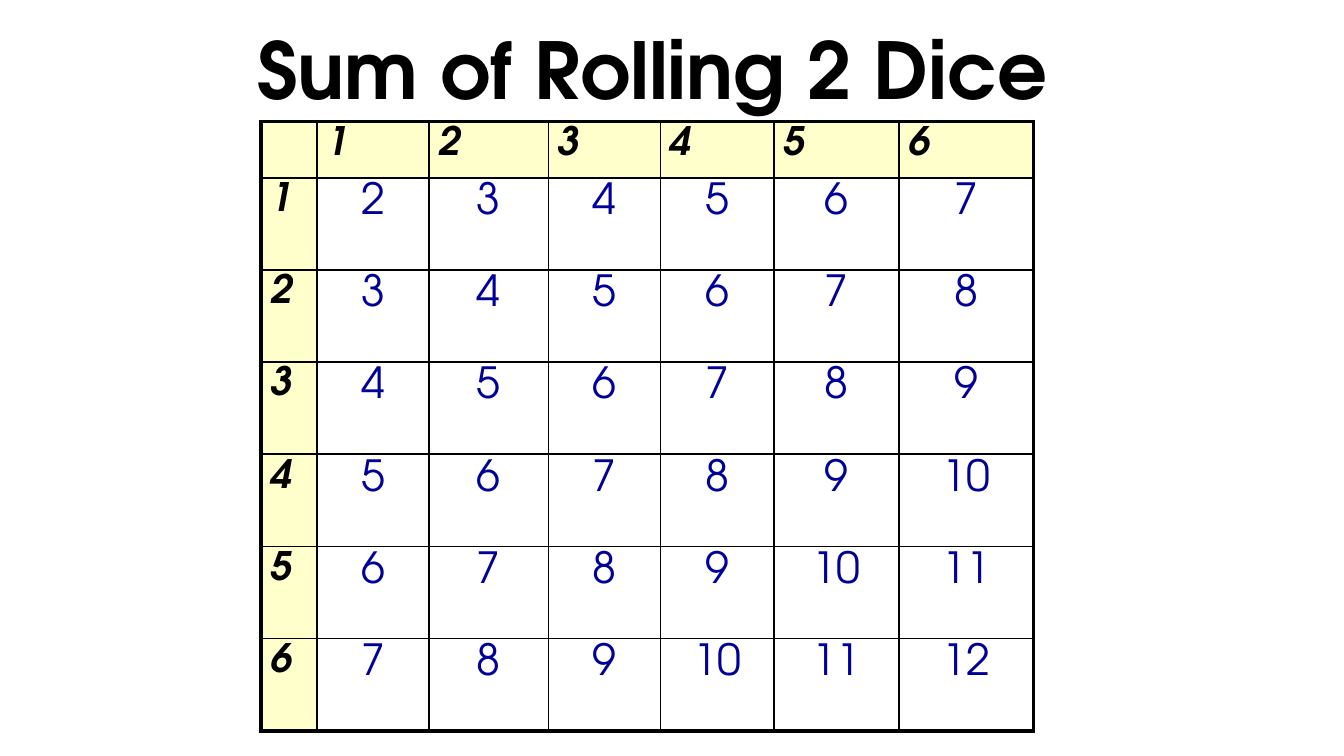
from lxml import etree
from pptx import Presentation
from pptx.dml.color import RGBColor
from pptx.enum.text import MSO_ANCHOR, PP_ALIGN
from pptx.oxml.ns import qn
from pptx.util import Pt

LEFT, CENTER = PP_ALIGN.LEFT, PP_ALIGN.CENTER
TOP, BOTTOM = MSO_ANCHOR.TOP, MSO_ANCHOR.BOTTOM

# Content
TITLE = "Sum of Rolling 2 Dice"
FACES = [1, 2, 3, 4, 5, 6]
GRID = [[""] + FACES] + [[face] + [face + other for other in FACES] for face in FACES]

# Layout, in points
COLUMN_WIDTHS = [30, 60, 64, 60, 61, 67, 72]
ROW_HEIGHTS = [30.24] + [49.4] * len(FACES)
TABLE_LEFT, TABLE_TOP = 139.8, 65
THIN, THICK = 1, 2.25

FONT = "TeX Gyre Adventor"
COLORS = {"ink": "000000", "sum": "000099", "header": "FFFFCC"}


def add_span(para, text, size, color, bold=False, italic=False):
    span = para.add_run()
    span.text = text
    font = span.font
    font.name, font.size, font.bold, font.italic = FONT, Pt(size), bold, italic
    font.color.rgb = RGBColor.from_string(COLORS[color])


def set_borders(cell, widths):
    properties = cell._tc.get_or_add_tcPr()
    for position, (side, width) in enumerate(widths.items()):
        line = etree.Element(qn(f"a:ln{side}"), w=str(Pt(width)))
        fill = etree.SubElement(line, qn("a:solidFill"))
        etree.SubElement(fill, qn("a:srgbClr"), val=COLORS["ink"])
        properties.insert(position, line)


def fill_cell(cell, value, row, column):
    is_header = row == 0 or column == 0
    cell.margin_left = cell.margin_right = Pt(5)
    cell.margin_top = cell.margin_bottom = Pt(2.7)
    cell.vertical_anchor = TOP
    if is_header:
        cell.fill.solid()
        cell.fill.fore_color.rgb = RGBColor.from_string(COLORS["header"])
    else:
        cell.fill.background()
    para = cell.text_frame.paragraphs[0]
    para.alignment = LEFT if is_header else CENTER
    if value and is_header:
        add_span(para, str(value), 21, "ink", bold=True, italic=True)
    elif value:
        add_span(para, str(value), 23, "sum")
    last = len(FACES)
    set_borders(cell, {
        "L": THICK if column == 0 else THIN,
        "R": THICK if column == last else THIN,
        "T": THICK if row == 0 else THIN,
        "B": THICK if row == last else THIN,
    })


deck = Presentation()
deck.slide_width, deck.slide_height = Pt(720), Pt(405)
page = deck.slides.add_slide(deck.slide_layouts[5])

# Title
title = page.shapes.title
title.left, title.top, title.width, title.height = Pt(130.5), Pt(-2), Pt(459), Pt(67.5)
title.text_frame.vertical_anchor = BOTTOM
title.text_frame.word_wrap = True
heading = title.text_frame.paragraphs[0]
heading.alignment = LEFT
add_span(heading, TITLE, 42, "ink", bold=True)

# Table of sums
table = page.shapes.add_table(
    len(GRID), len(GRID[0]), Pt(TABLE_LEFT), Pt(TABLE_TOP),
    Pt(sum(COLUMN_WIDTHS)), Pt(sum(ROW_HEIGHTS))).table
table.first_row = table.horz_banding = False
for column, width in zip(table.columns, COLUMN_WIDTHS):
    column.width = Pt(width)
for row, height in zip(table.rows, ROW_HEIGHTS):
    row.height = Pt(height)
for row, values in enumerate(GRID):
    for column, value in enumerate(values):
        fill_cell(table.cell(row, column), value, row, column)

deck.save("out.pptx")
